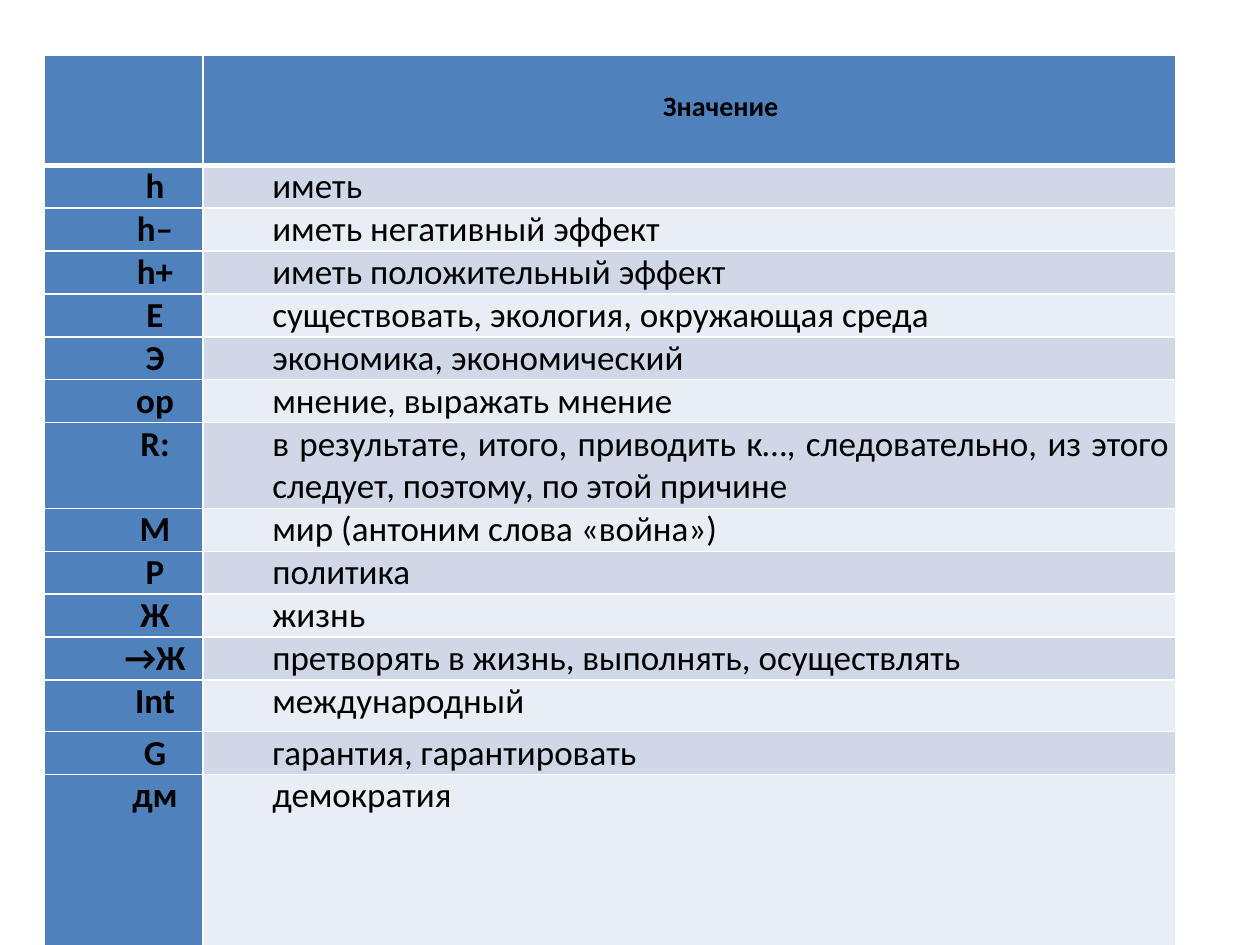
from dataclasses import dataclass

from lxml import etree
from pptx import Presentation
from pptx.dml.color import RGBColor
from pptx.enum.text import PP_ALIGN
from pptx.oxml.ns import qn
from pptx.util import Cm, Pt

CENTER = PP_ALIGN.CENTER
JUSTIFY = PP_ALIGN.JUSTIFY


@dataclass(frozen=True)
class Theme:
    font: str = "Calibri"
    text: str = "000000"
    accent: str = "4F81BD"
    bands: tuple = ("D0D8E8", "E9EDF4")
    border: str = "FFFFFF"
    header_size: int = 16
    body_size: int = 20
    thin: int = 1
    thick: int = 3


THEME = Theme()
LINE_HEIGHT = 0.86
HEADER_HEIGHT = 2.21
SYMBOLS = [
    ("h", "иметь", LINE_HEIGHT),
    ("h–", "иметь негативный эффект", LINE_HEIGHT),
    ("h+", "иметь положительный эффект", LINE_HEIGHT),
    ("Е", "существовать, экология, окружающая среда", LINE_HEIGHT),
    ("Э", "экономика, экономический", LINE_HEIGHT),
    ("op", "мнение, выражать мнение", LINE_HEIGHT),
    ("R:", "в результате, итого, приводить к…, следовательно, из этого "
           "следует, поэтому, по этой причине", 2 * LINE_HEIGHT),
    ("М", "мир (антоним слова «война»)", LINE_HEIGHT),
    ("Р", "политика", LINE_HEIGHT),
    ("Ж", "жизнь", LINE_HEIGHT),
    ("→Ж", "претворять в жизнь, выполнять, осуществлять", LINE_HEIGHT),
    ("Int", "международный", 1.04),
    ("G", "гарантия, гарантировать", LINE_HEIGHT),
    ("дм", "демократия", 3.89),
]


def write_cell(cell, text, *, fill, size=THEME.body_size, bold=False,
               align=CENTER, margin_top=0, top=THEME.thin, bottom=THEME.thin):
    """Fill, border and write one cell; top and bottom are border widths in points."""
    properties = cell._tc.get_or_add_tcPr()
    widths = {"a:lnL": THEME.thin, "a:lnR": THEME.thin, "a:lnT": top, "a:lnB": bottom}
    for side, width in widths.items():
        line = etree.SubElement(properties, qn(side), w=str(Pt(width)))
        solid = etree.SubElement(line, qn("a:solidFill"))
        etree.SubElement(solid, qn("a:srgbClr"), val=THEME.border)
    cell.fill.solid()
    cell.fill.fore_color.rgb = RGBColor.from_string(fill)
    cell.margin_left, cell.margin_right = Cm(1.4), Cm(0.13)
    cell.margin_top, cell.margin_bottom = Cm(margin_top), 0
    cell.text = text
    paragraph = cell.text_frame.paragraphs[0]
    paragraph.alignment = align
    for run in paragraph.runs:
        run.font.name = THEME.font
        run.font.size = Pt(size)
        run.font.bold = bold
        run.font.color.rgb = RGBColor.from_string(THEME.text)


presentation = Presentation()
presentation.slide_width, presentation.slide_height = Cm(25.4), Cm(19.05)
slide = presentation.slides.add_slide(presentation.slide_layouts[6])

heights = [HEADER_HEIGHT] + [height for _, _, height in SYMBOLS]
table = slide.shapes.add_table(len(heights), 2, Cm(0.89), Cm(1.12),
                               Cm(22.81), Cm(sum(heights))).table
table.horz_banding = False
for column, width in zip(table.columns, (3.2, 19.61)):
    column.width = Cm(width)
for row, height in zip(table.rows, heights):
    row.height = Cm(height)

for column, heading in enumerate(("", "Значение")):
    write_cell(table.cell(0, column), heading, fill=THEME.accent, bold=True,
               size=THEME.header_size, margin_top=0.69, bottom=THEME.thick)

for row, (symbol, meaning, _) in enumerate(SYMBOLS, start=1):
    top = THEME.thick if row == 1 else THEME.thin
    write_cell(table.cell(row, 0), symbol, fill=THEME.accent, bold=True, top=top)
    write_cell(table.cell(row, 1), meaning, fill=THEME.bands[(row - 1) % 2],
               align=JUSTIFY, top=top)

presentation.save("out.pptx")
